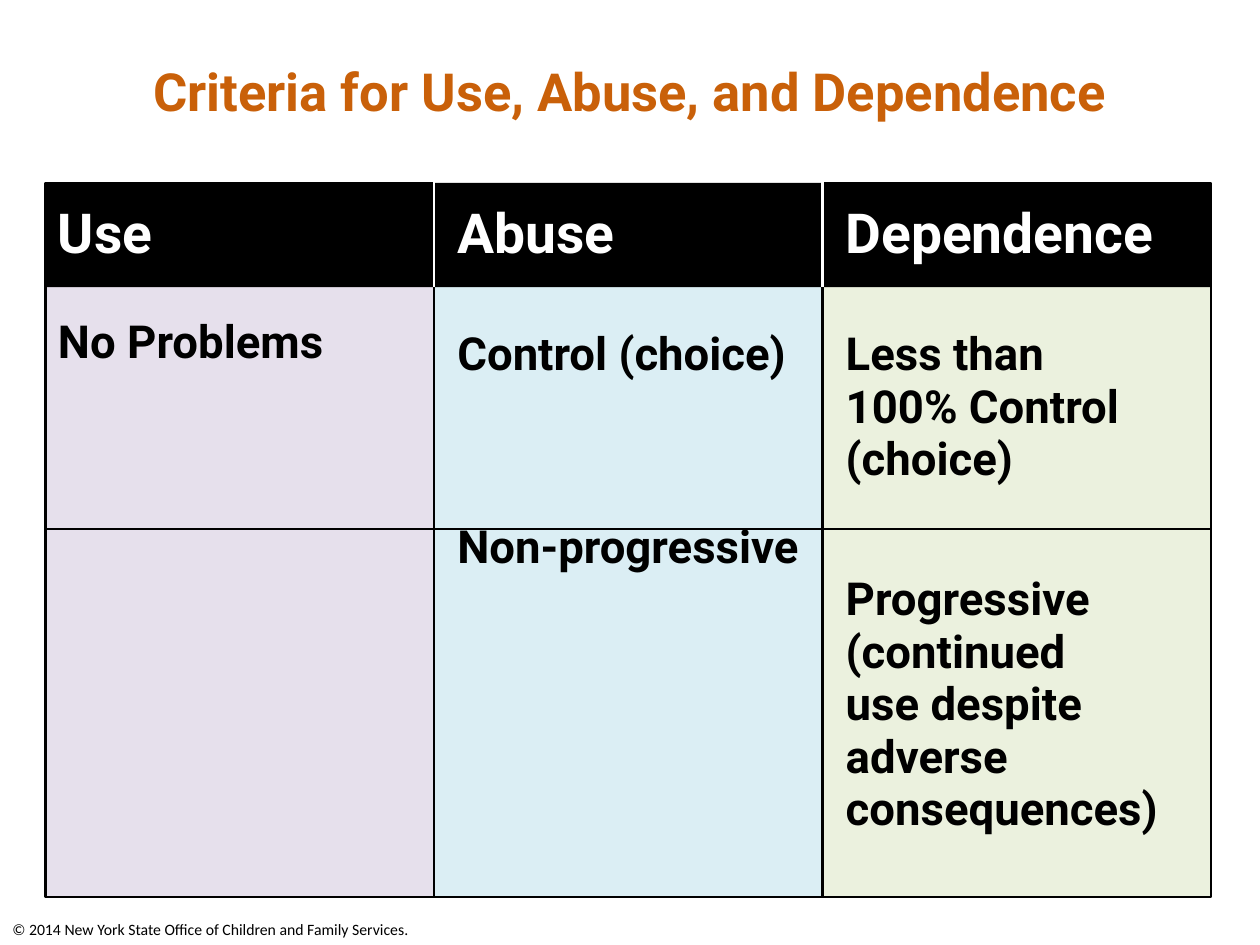
"""Build the slide comparing criteria for use, abuse and dependence."""
from dataclasses import dataclass

from pptx import Presentation
from pptx.dml.color import RGBColor
from pptx.enum.shapes import MSO_CONNECTOR, MSO_SHAPE
from pptx.enum.text import MSO_ANCHOR, MSO_AUTO_SIZE, PP_ALIGN
from pptx.oxml.ns import qn
from pptx.util import Cm, Pt

LEFT, TOP, BOTTOM = 0.92, 3.69, 18.08
COL_W, HEADER_H = 7.83, 2.1
RULES_Y = (5.75, 10.66)
TEXT_TOP = 4.32
BLACK, WHITE = "000000", "FFFFFF"


@dataclass
class Item:
    text: str
    spacing: float
    after: float


@dataclass
class Column:
    heading: str
    items: list[Item]
    fill: str
    top: float
    indent: float
    text_w: float
    text_h: float


COLUMNS = [
    Column("Use", [Item("No Problems", 23, 22)],
           "E6E0EC", TOP, 0, 7.42, 12.9),
    Column("Abuse", [Item("Control (choice)", 30, 80), Item("Non-progressive", 30, 22)],
           "DBEEF4", 4.05, 0.22, 7.62, 12.9),
    Column("Dependence",
           [Item("Less than \v100% Control (choice)", 30, 50),
            Item("Progressive (continued \vuse despite adverse consequences)", 30, 22)],
           "EBF1DE", TOP, 0.22, 8.69, 13.34),
]


def rgb(color: str) -> RGBColor:
    return RGBColor.from_string(color)


def write(tf, text: str, *, size: float, color: str = BLACK, font: str = "Roboto",
          bold: bool = True, align=PP_ALIGN.LEFT, spacing: float | None = None,
          after: float = 0) -> None:
    p = tf.paragraphs[0] if not tf.text else tf.add_paragraph()
    p.text = text
    p.alignment = align
    p.space_before, p.space_after = Pt(0), Pt(after)
    if spacing:
        p.line_spacing = Pt(spacing)
    for r in p.runs:
        r.font.name, r.font.size, r.font.bold = font, Pt(size), bold
        r.font.color.rgb = rgb(color)


def set_frame(tf) -> None:
    tf.word_wrap = True
    tf.auto_size = MSO_AUTO_SIZE.NONE
    tf.vertical_anchor = MSO_ANCHOR.TOP


def add_text(s, x: float, y: float, w: float, h: float):
    tf = s.shapes.add_textbox(Cm(x), Cm(y), Cm(w), Cm(h)).text_frame
    set_frame(tf)
    return tf


def add_rect(s, x: float, y: float, w: float, h: float, fill: str,
             line: str | None = None) -> None:
    sp = s.shapes.add_shape(MSO_SHAPE.RECTANGLE, Cm(x), Cm(y), Cm(w), Cm(h))
    sp.shadow.inherit = False
    sp.fill.solid()
    sp.fill.fore_color.rgb = rgb(fill)
    if line:
        sp.line.color.rgb = rgb(line)
        sp.line.width = Pt(1.25)
    else:
        sp.line.fill.background()


def add_line(s, x1: float, y1: float, x2: float, y2: float, color: str) -> None:
    cx = s.shapes.add_connector(MSO_CONNECTOR.STRAIGHT, Cm(x1), Cm(y1), Cm(x2), Cm(y2))
    cx.line.color.rgb = rgb(color)
    cx.line.width = Pt(1.25)
    sp_pr = cx._element.spPr
    sp_pr.append(sp_pr.makeelement(qn("a:effectLst"), {}))


def main() -> None:
    prs = Presentation()
    prs.slide_width, prs.slide_height = Cm(25.4), Cm(19.05)
    s = prs.slides.add_slide(prs.slide_layouts[5])

    title = s.shapes.title
    title.left, title.top, title.width, title.height = Cm(0), Cm(1.07), Cm(25.4), Cm(2.34)
    set_frame(title.text_frame)
    write(title.text_frame, "Criteria for Use, Abuse, and Dependence",
          size=30, color="C96009", align=PP_ALIGN.CENTER)

    footer = add_text(s, 0, 18.42, 25.4, 0.63)
    write(footer, "© 2014 New York State Office of Children and Family Services.",
          size=9, font="Calibri", bold=False)

    edges = [LEFT + i * COL_W for i in range(len(COLUMNS) + 1)]
    for x, col in reversed(list(zip(edges, COLUMNS))):
        add_rect(s, x, col.top, COL_W, BOTTOM - col.top, col.fill, BLACK)
    for y in RULES_Y:
        add_line(s, LEFT, y, edges[-1], y, BLACK)
    add_rect(s, LEFT, TOP, edges[-1] - LEFT, HEADER_H, BLACK)

    for x, col in zip(edges, COLUMNS):
        tf = add_text(s, x + col.indent, TEXT_TOP, col.text_w, col.text_h)
        write(tf, col.heading, size=31.5, color=WHITE, spacing=25, after=36)
        for item in col.items:
            write(tf, item.text, size=26, spacing=item.spacing, after=item.after)
    for x in edges[1:-1]:
        add_line(s, x, 3.46, x, TOP + HEADER_H, WHITE)

    prs.save("out.pptx")


if __name__ == "__main__":
    main()
